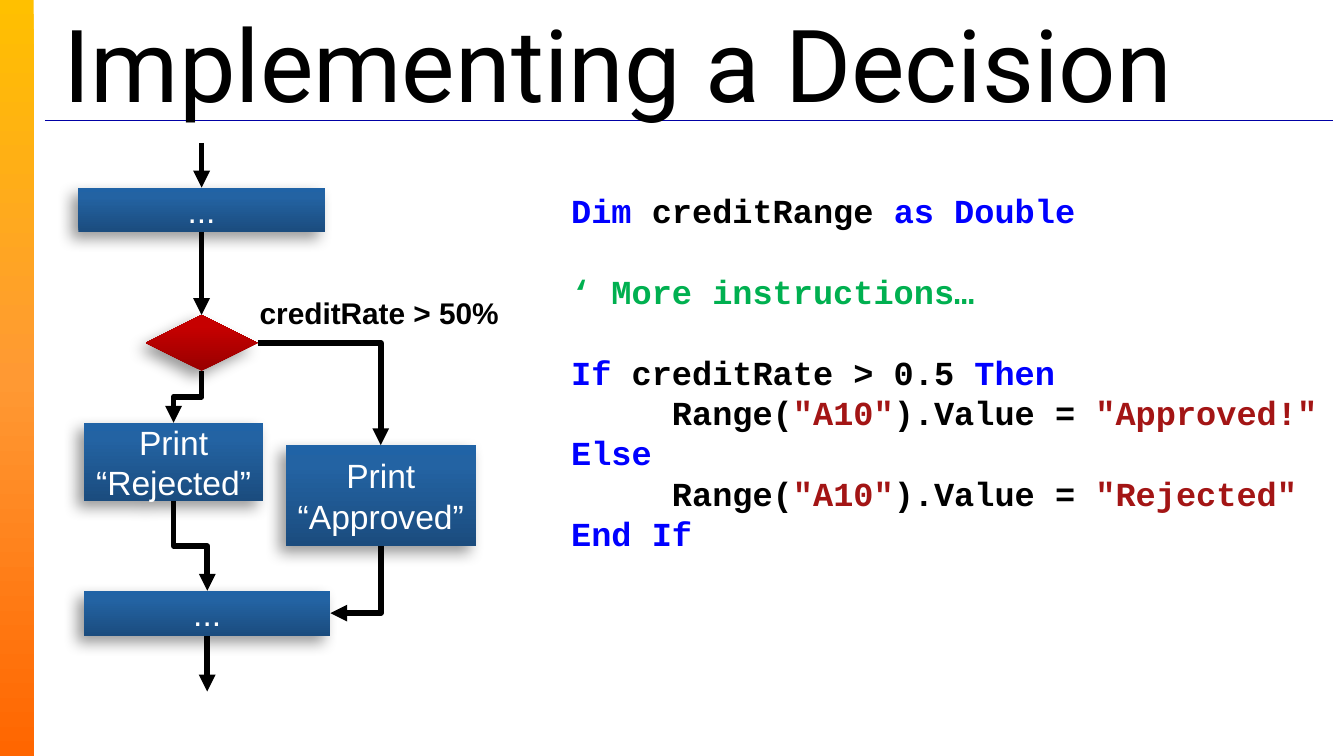
from copy import deepcopy
from typing import NamedTuple

from lxml.etree import SubElement
from pptx import Presentation
from pptx.dml.color import RGBColor
from pptx.enum.shapes import MSO_CONNECTOR as CXN, MSO_SHAPE as SHAPE
from pptx.enum.text import MSO_ANCHOR as ANCHOR, PP_ALIGN as ALIGN
from pptx.oxml.ns import qn
from pptx.util import Pt

PX = 9525
TOP, LEFT, BOTTOM, RIGHT = range(4)
LINE_PITCH = 21.6
BLACK, WHITE, KEYWORD, STRING, COMMENT = "000000", "FFFFFF", "0000FF", "A31515", "00B050"


class Stop(NamedTuple):
    position: float
    color: str


class Run(NamedTuple):
    text: str
    color: str = BLACK


class Style(NamedTuple):
    font: str
    size: int
    bold: bool = False


class Node(NamedTuple):
    x: int
    y: int
    w: int
    h: int
    kind: SHAPE
    stops: tuple[Stop, ...]
    text: str = ""

    def side(self, index: int) -> tuple[int, int]:
        mid_x, mid_y = self.x + self.w // 2, self.y + self.h // 2
        return ((mid_x, self.y), (self.x, mid_y), (mid_x, self.y + self.h), (self.x + self.w, mid_y))[index]


class Elbow(NamedTuple):
    start: str
    start_side: int
    end: str
    end_side: int


class CodeLine(NamedTuple):
    runs: tuple[Run, ...]
    gap: bool = False


BLUE = (Stop(0, "1B4C7E"), Stop(0.8, "2363A3"), Stop(1, "2063A6"))
RED = (Stop(0, "980000"), Stop(0.8, "C60000"), Stop(1, "C70000"))
ORANGE = (Stop(0, "FFC000"), Stop(0.5, "FF9933"), Stop(1, "FF6600"))

TITLE = Style("Roboto", 54)
BODY = Style("Arial", 18)
LABEL = Style("Arial", 16, True)
CODE = Style("Courier New", 18, True)

NODES = {
    "before": Node(56, 134, 176, 32, SHAPE.FLOWCHART_PROCESS, BLUE, "..."),
    "decision": Node(104, 225, 80, 40, SHAPE.FLOWCHART_DECISION, RED),
    "approved": Node(204, 318, 136, 72, SHAPE.FLOWCHART_PROCESS, BLUE, "Print “Approved”"),
    "rejected": Node(60, 302, 128, 56, SHAPE.FLOWCHART_PROCESS, BLUE, "Print “Rejected”"),
    "after": Node(60, 422, 176, 32, SHAPE.FLOWCHART_PROCESS, BLUE, "..."),
}

ELBOWS = (
    Elbow("decision", RIGHT, "approved", TOP),
    Elbow("decision", BOTTOM, "rejected", TOP),
    Elbow("rejected", BOTTOM, "after", TOP),
    Elbow("approved", BOTTOM, "after", RIGHT),
)


def assignment(value: str) -> CodeLine:
    return CodeLine((Run("     Range("), Run('"A10"', STRING), Run(").Value = "), Run(value, STRING)))


CODE_LINES = (
    CodeLine((Run("Dim ", KEYWORD), Run("creditRange"), Run(" as Double", KEYWORD))),
    CodeLine((Run("‘ More instructions…", COMMENT),), True),
    CodeLine((Run("If", KEYWORD), Run(" creditRate > 0.5 "), Run("Then", KEYWORD)), True),
    assignment('"Approved!"'),
    CodeLine((Run("Else", KEYWORD),)),
    assignment('"Rejected"'),
    CodeLine((Run("End If", KEYWORD),)),
)


def rgb(color: str) -> RGBColor:
    return RGBColor.from_string(color)


def px(*lengths: int) -> list[int]:
    return [length * PX for length in lengths]


def add_runs(p, runs: tuple[Run, ...], style: Style) -> None:
    for run in runs:
        r = p.add_run()
        r.text = run.text
        r.font.name, r.font.size, r.font.bold = style.font, Pt(style.size), style.bold
        r.font.color.rgb = rgb(run.color)


def add_text_box(slide, x: int, y: int, w: int, h: int):
    tf = slide.shapes.add_textbox(*px(x, y, w, h)).text_frame
    tf.word_wrap = True
    return tf


def fill_gradient(sp, stops: tuple[Stop, ...], angle: int) -> None:
    sp.fill.gradient()
    sp.fill.gradient_angle = angle
    gs_list = sp._element.spPr.find(".//" + qn("a:gsLst"))
    gs_list.append(deepcopy(gs_list[-1]))
    for gs, stop in zip(sp.fill.gradient_stops, stops):
        gs.color.rgb = rgb(stop.color)
        gs.position = stop.position


def add_gradient_shape(slide, kind: SHAPE, box: tuple[int, ...], stops: tuple[Stop, ...], angle: int):
    sp = slide.shapes.add_shape(kind, *px(*box))
    fill_gradient(sp, stops, angle)
    sp.line.fill.background()
    sp.shadow.inherit = False
    return sp


def add_node(slide, node: Node):
    sp = add_gradient_shape(slide, node.kind, node[:4], node.stops, 90)
    effects = sp._element.spPr.find(qn("a:effectLst"))
    shadow = SubElement(effects, qn("a:outerShdw"), blurRad=str(Pt(8)), dist=str(Pt(5)),
                        dir=str(135 * 60000), rotWithShape="0")
    color = SubElement(shadow, qn("a:srgbClr"), val=BLACK)
    SubElement(color, qn("a:alpha"), val="40000")
    if node.text:
        tf = sp.text_frame
        tf.word_wrap, tf.vertical_anchor = True, ANCHOR.MIDDLE
        tf.margin_left = tf.margin_right = tf.margin_top = tf.margin_bottom = 5 * PX
        p = tf.paragraphs[0]
        p.alignment, p.line_spacing = ALIGN.CENTER, Pt(LINE_PITCH)
        add_runs(p, (Run(node.text, WHITE),), BODY)
    return sp


def add_line(slide, kind: CXN, start: tuple[int, int], end: tuple[int, int],
             color: str = BLACK, width: float = 3, arrow: bool = True):
    cxn = slide.shapes.add_connector(kind, *px(*start, *end))
    cxn.line.color.rgb, cxn.line.width = rgb(color), Pt(width)
    if arrow:
        SubElement(cxn.line._get_or_add_ln(), qn("a:tailEnd"), type="triangle")
    SubElement(cxn._element.spPr, qn("a:effectLst"))
    return cxn


def add_elbow(slide, elbow: Elbow) -> None:
    x1, y1 = NODES[elbow.start].side(elbow.start_side)
    x2, y2 = NODES[elbow.end].side(elbow.end_side)
    cxn = add_line(slide, CXN.ELBOW, (x1, y1), (x2, y2))
    sp_pr = cxn._element.spPr
    if {elbow.start_side, elbow.end_side} != {TOP, BOTTOM}:
        sp_pr.find(qn("a:prstGeom")).set("prst", "bentConnector2")
    if elbow.start_side == BOTTOM:
        w, h = abs(y2 - y1), abs(x2 - x1)
        cxn.left, cxn.top = (x1 + x2 - w) * PX // 2, (y1 + y2 - h) * PX // 2
        cxn.width, cxn.height = px(w, h)
        xfrm = sp_pr.find(qn("a:xfrm"))
        xfrm.set("rot", str((270 if x2 > x1 else 90) * 60000))
        xfrm.set("flipH", "1" if x2 > x1 else "0")


def main() -> None:
    prs = Presentation()
    prs.slide_width, prs.slide_height = px(960, 540)
    slide = prs.slides.add_slide(prs.slide_layouts[6])

    add_gradient_shape(slide, SHAPE.RECTANGLE, (0, 0, 24, 540), ORANGE, 270)
    add_line(slide, CXN.STRAIGHT, (32, 86), (952, 86), "0000A5", 0.75, False)

    tf = add_text_box(slide, 36, 14, 920, 51)
    tf.vertical_anchor, tf.margin_top = ANCHOR.MIDDLE, 14 * PX
    add_runs(tf.paragraphs[0], (Run("Implementing a Decision"),), TITLE)

    shapes = {name: add_node(slide, node) for name, node in NODES.items()}
    for elbow in ELBOWS:
        add_elbow(slide, elbow)

    before, decision, after = (NODES[name] for name in ("before", "decision", "after"))
    entry = add_line(slide, CXN.STRAIGHT, (144, 102), before.side(TOP))
    entry.end_connect(shapes["before"], TOP)
    step = add_line(slide, CXN.STRAIGHT, before.side(BOTTOM), decision.side(TOP))
    step.begin_connect(shapes["before"], BOTTOM)
    step.end_connect(shapes["decision"], TOP)
    leave = add_line(slide, CXN.STRAIGHT, after.side(BOTTOM), (148, 494))
    leave.begin_connect(shapes["after"], BOTTOM)

    tf = add_text_box(slide, 176, 206, 208, 36)
    add_runs(tf.paragraphs[0], (Run("creditRate > 50%"),), LABEL)

    tf = add_text_box(slide, 408, 134, 536, 291)
    tf.margin_left = tf.margin_right = tf.margin_bottom = 0
    tf.margin_top = 2 * PX
    for i, line in enumerate(CODE_LINES):
        p = tf.add_paragraph() if i else tf.paragraphs[0]
        p.line_spacing = Pt(LINE_PITCH)
        if line.gap:
            p.space_before = Pt(LINE_PITCH)
        add_runs(p, line.runs, CODE)

    prs.save("out.pptx")


if __name__ == "__main__":
    main()
